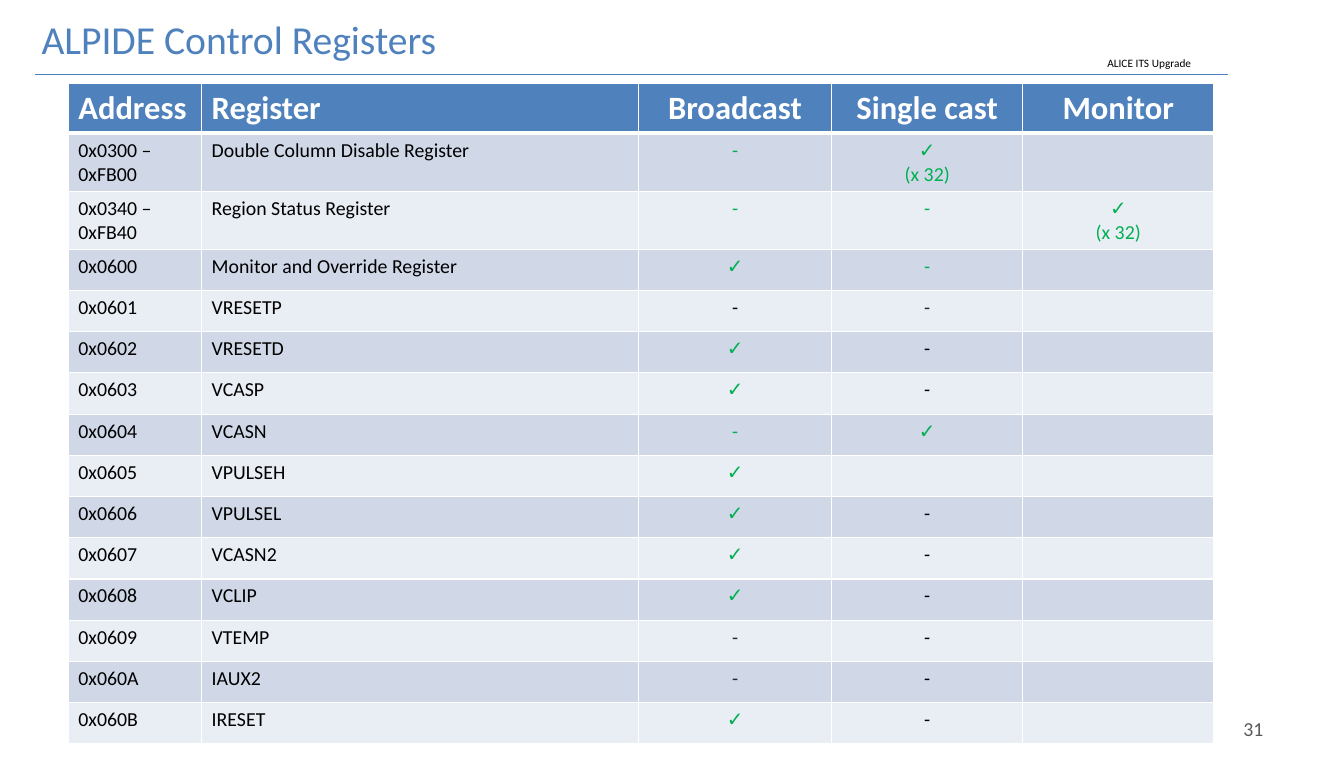
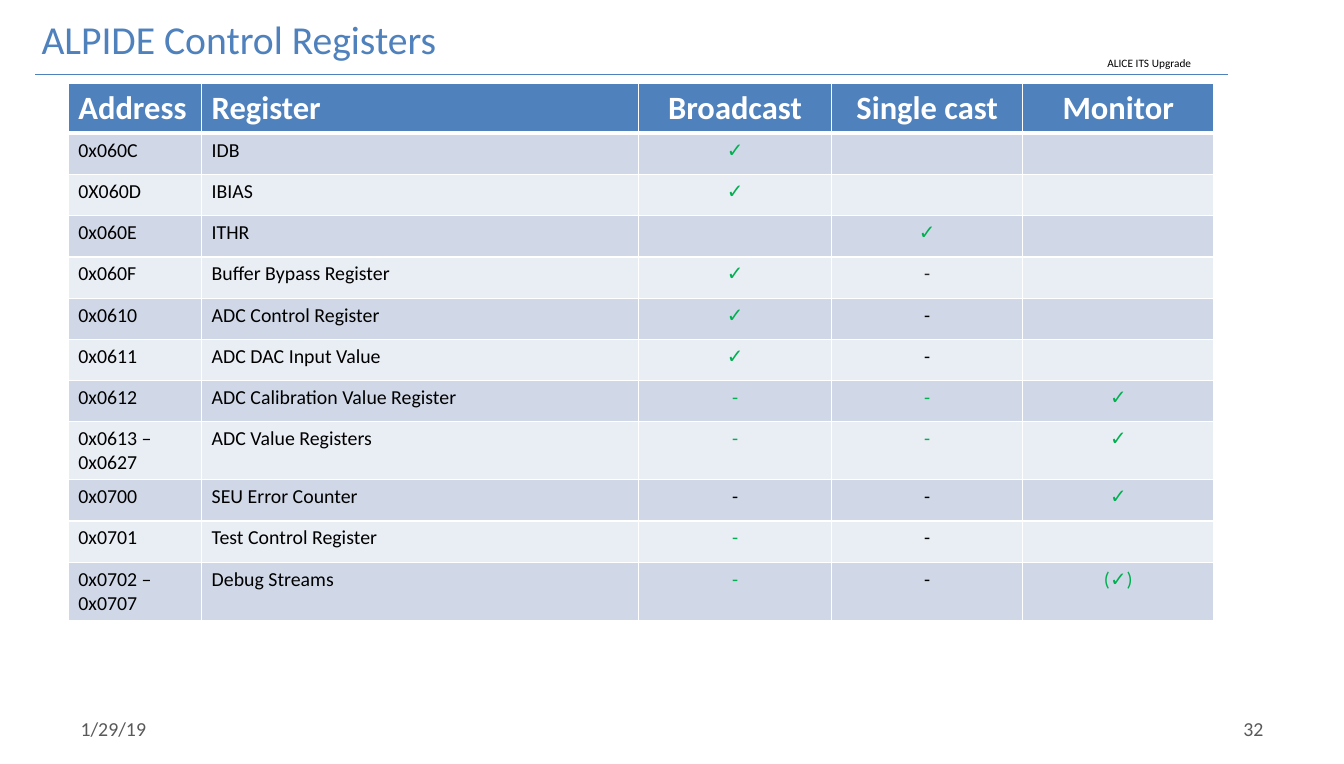
import pptx
import pptx.dml.color
import pptx.enum.shapes
import pptx.enum.text
import pptx.oxml.ns
import pptx.util
from lxml import etree

Pt = pptx.util.Pt
ALIGN = pptx.enum.text.PP_ALIGN
ANCHOR = pptx.enum.text.MSO_ANCHOR
FIT = pptx.enum.text.MSO_AUTO_SIZE

# Content
TITLE = "ALPIDE Control Registers"
PROJECT = "ALICE ITS Upgrade"
HEADINGS = ("Address", "Register", "Broadcast", "Single cast", "Monitor")

NONE = ("", "black")
YES = ("✓", "green")
YES_32 = ("✓\v(x 32)", "green")
MAYBE = ("(✓)", "green")
NO = ("-", "black")
NO_GREEN = ("-", "green")
NO_DARK = ("-", "dark")

# Address, register, then the marks for broadcast, single cast and monitor
SLIDES = [
    {"number": "31", "date": None, "registers": [
        ("0x0300 – 0xFB00", "Double Column Disable Register", NO_GREEN, YES_32, NONE),
        ("0x0340 –\n0xFB40", "Region Status Register", NO_GREEN, NO_GREEN, YES_32),
        ("0x0600", "Monitor and Override Register", YES, NO_GREEN, NONE),
        ("0x0601", "VRESETP", NO, NO_DARK, NONE),
        ("0x0602", "VRESETD", YES, NO, NONE),
        ("0x0603", "VCASP", YES, NO, NONE),
        ("0x0604", "VCASN", NO_GREEN, YES, NONE),
        ("0x0605", "VPULSEH", YES, NONE, NONE),
        ("0x0606", "VPULSEL", YES, NO, NONE),
        ("0x0607", "VCASN2", YES, NO, NONE),
        ("0x0608", "VCLIP", YES, NO, NONE),
        ("0x0609", "VTEMP", NO_DARK, NO, NONE),
        ("0x060A", "IAUX2", NO_DARK, NO, NONE),
        ("0x060B", "IRESET", YES, NO, NONE),
    ]},
    {"number": "32", "date": "1/29/19", "registers": [
        ("0x060C", "IDB", YES, NONE, NONE),
        ("0X060D", "IBIAS", YES, NONE, NONE),
        ("0x060E", "ITHR", NONE, YES, NONE),
        ("0x060F", "Buffer Bypass Register", YES, NO_DARK, NONE),
        ("0x0610", "ADC Control Register", YES, NO, NONE),
        ("0x0611", "ADC DAC Input Value", YES, NO, NONE),
        ("0x0612", "ADC Calibration Value Register", NO_GREEN, NO_GREEN, YES),
        ("0x0613 – 0x0627", "ADC Value Registers", NO_GREEN, NO_GREEN, YES),
        ("0x0700", "SEU Error Counter", NO, NO, YES),
        ("0x0701", "Test Control Register", NO_GREEN, NO, NONE),
        ("0x0702 – 0x0707", "Debug Streams", NO_GREEN, NO, MAYBE),
    ]},
]

# Shared style
FONT = "Calibri"
COLOURS = {"accent": "4F81BD", "white": "FFFFFF", "black": "000000", "dark": "262626",
           "green": "00B050", "footer": "595959", "band_dark": "D0D8E8", "band_light": "E9EDF4"}
SLIDE_SIZE = (949.68, 540)
TABLE_LEFT, TABLE_TOP = 48.2, 59.2
COLUMN_WIDTHS = (94.2, 308.8, 136.6, 135, 135)
HEADER_HEIGHT, ROW_HEIGHT, TWO_LINE_HEIGHT = 35, 29.15, 41
FIRST_MARK_COLUMN = 2
LABEL_FRAME = {"word_wrap": False, "auto_size": FIT.SHAPE_TO_FIT_TEXT}
FOOTER_FRAME = {"word_wrap": True, "vertical_anchor": ANCHOR.MIDDLE,
                "margin_left": Pt(9.4), "margin_right": Pt(9.4),
                "margin_top": Pt(4.3), "margin_bottom": Pt(4.3)}


def rgb(colour):
    return pptx.dml.color.RGBColor.from_string(COLOURS[colour])


def write(frame, text, size, colour, align=ALIGN.LEFT, bold=False):
    frame.text = text
    for paragraph in frame.paragraphs:
        paragraph.alignment = align
        for run in paragraph.runs:
            for name, value in {"name": FONT, "size": Pt(size), "bold": bold}.items():
                setattr(run.font, name, value)
            run.font.color.rgb = rgb(colour)


def add_label(slide, box, text, size, colour, frame_format, align=ALIGN.LEFT):
    frame = slide.shapes.add_textbox(*map(Pt, box)).text_frame
    write(frame, text, size, colour, align)
    for name, value in frame_format.items():
        setattr(frame, name, value)


def add_frame(slide, number, date):
    # Rule under the title
    rule = slide.shapes.add_connector(pptx.enum.shapes.MSO_CONNECTOR.STRAIGHT,
                                      Pt(867.6), Pt(52.5), Pt(24.5), Pt(52.5))
    rule.line.color.rgb = rgb("accent")
    rule.line.width = Pt(0.75)
    etree.SubElement(rule._element.spPr, pptx.oxml.ns.qn("a:effectLst"))

    # Project tag, title and footers
    add_label(slide, (775.4, 36, 74.2, 17), PROJECT, 8, "black", LABEL_FRAME)
    add_label(slide, (22.3, 7.2, 296.6, 41), TITLE, 28, "accent", LABEL_FRAME)
    if date:
        add_label(slide, (47.5, 500.4, 221.8, 28.8), date, 14, "footer", FOOTER_FRAME)
    add_label(slide, (680.4, 500.4, 221.8, 28.8), number, 14, "footer", FOOTER_FRAME,
              ALIGN.RIGHT)


def style_cell(cell, fill, is_header):
    qn = pptx.oxml.ns.qn
    properties = cell._tc.get_or_add_tcPr()
    for side in ("L", "R", "T", "B"):
        width = 3 if is_header and side == "B" else 1
        border = etree.SubElement(properties, qn("a:ln" + side), w=str(Pt(width)))
        solid = etree.SubElement(border, qn("a:solidFill"))
        etree.SubElement(solid, qn("a:srgbClr"), val=COLOURS["white"])
    cell.fill.solid()
    cell.fill.fore_color.rgb = rgb(fill)


def row_height(address, register, *marks):
    two_lines = "–" in address or YES_32 in marks
    return TWO_LINE_HEIGHT if two_lines else ROW_HEIGHT


def add_register_table(slide, registers):
    heights = [HEADER_HEIGHT] + [row_height(*register) for register in registers]
    table = slide.shapes.add_table(len(heights), len(HEADINGS), Pt(TABLE_LEFT), Pt(TABLE_TOP),
                                   Pt(sum(COLUMN_WIDTHS)), Pt(sum(heights))).table
    table.horz_banding = False
    for column, width in zip(table.columns, COLUMN_WIDTHS):
        column.width = Pt(width)

    for r, (height, entries) in enumerate(zip(heights, [HEADINGS] + registers)):
        table.rows[r].height = Pt(height)
        is_header = r == 0
        fill = "accent" if is_header else ("band_light", "band_dark")[r % 2]
        for c, entry in enumerate(entries):
            cell = table.cell(r, c)
            style_cell(cell, fill, is_header)
            text, colour = entry if isinstance(entry, tuple) else (entry, "black")
            align = ALIGN.CENTER if c >= FIRST_MARK_COLUMN else ALIGN.LEFT
            if is_header:
                write(cell.text_frame, text, 23, "white", align, bold=True)
            elif text:
                write(cell.text_frame, text, 14, colour, align)


def main():
    deck = pptx.Presentation()
    deck.slide_width, deck.slide_height = map(Pt, SLIDE_SIZE)
    for content in SLIDES:
        slide = deck.slides.add_slide(deck.slide_layouts[6])
        add_frame(slide, content["number"], content["date"])
        add_register_table(slide, content["registers"])
    deck.save("out.pptx")


if __name__ == "__main__":
    main()
